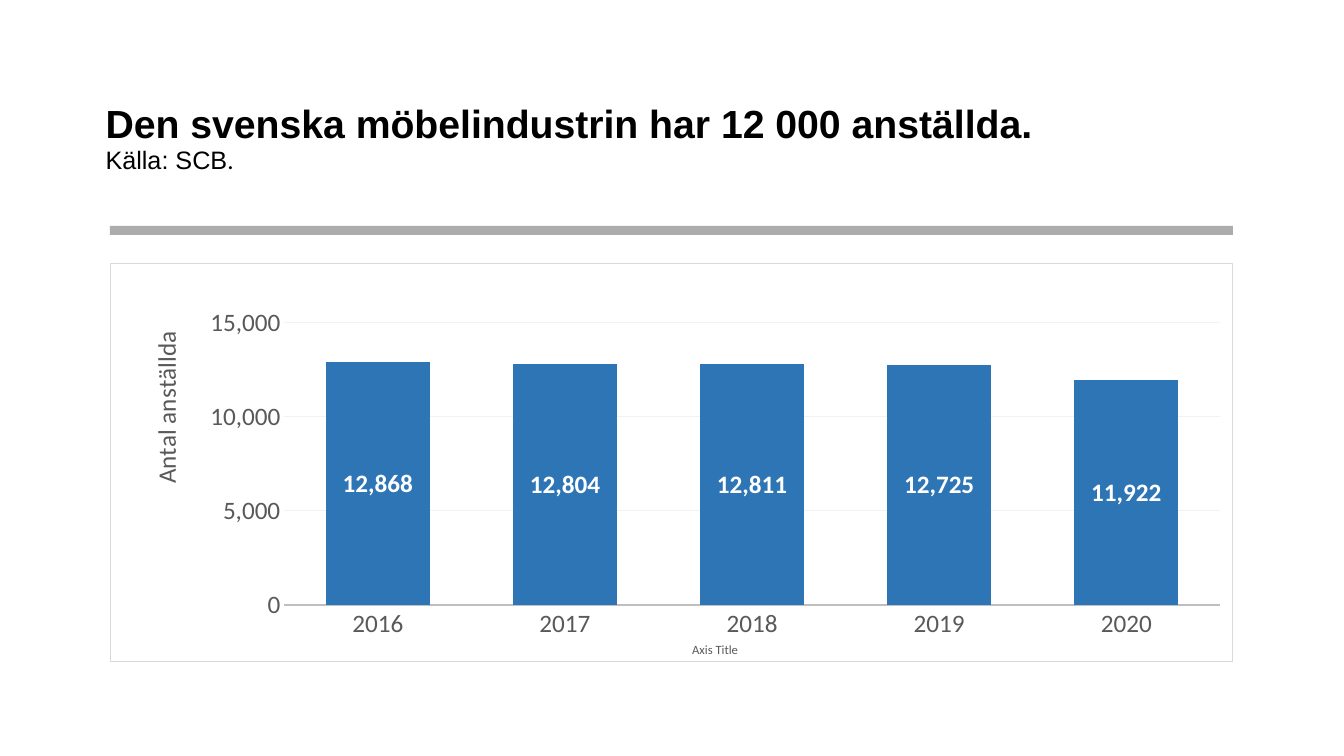
"""Build a slide with a column chart of employees in the Swedish furniture industry."""
from lxml import etree
from pptx import Presentation
from pptx.chart.data import CategoryChartData
from pptx.dml.color import RGBColor
from pptx.enum.chart import XL_CHART_TYPE, XL_LABEL_POSITION, XL_TICK_MARK
from pptx.enum.shapes import MSO_SHAPE
from pptx.enum.text import MSO_ANCHOR
from pptx.oxml import parse_xml
from pptx.oxml.ns import qn
from pptx.util import Cm, Pt

COLUMNS = XL_CHART_TYPE.COLUMN_CLUSTERED
CENTER = XL_LABEL_POSITION.CENTER
NO_TICK = XL_TICK_MARK.NONE
RECTANGLE = MSO_SHAPE.RECTANGLE
MIDDLE = MSO_ANCHOR.MIDDLE

BLACK = RGBColor(0x00, 0x00, 0x00)
WHITE = RGBColor(0xFF, 0xFF, 0xFF)
RULE_GRAY = RGBColor(0x80, 0x80, 0x80)
TEXT_GRAY = RGBColor(0x59, 0x59, 0x59)
AXIS_GRAY = RGBColor(0xBF, 0xBF, 0xBF)
GRID_GRAY = RGBColor(0xF2, 0xF2, 0xF2)
BLUE = RGBColor(0x2E, 0x75, 0xB6)

CHART_FRAME = """<c:spPr xmlns:c="http://schemas.openxmlformats.org/drawingml/2006/chart"
 xmlns:a="http://schemas.openxmlformats.org/drawingml/2006/main">
<a:solidFill><a:srgbClr val="FFFFFF"/></a:solidFill>
<a:ln w="9525"><a:solidFill><a:srgbClr val="D9D9D9"/></a:solidFill></a:ln></c:spPr>"""


def set_font(font, size, color, bold=False, name="Calibri"):
    font.name, font.size, font.bold = name, Pt(size), bold
    font.color.rgb = color


def set_layout(layout, **settings):
    manual = etree.SubElement(layout, qn("c:manualLayout"))
    for tag, value in settings.items():
        etree.SubElement(manual, qn(f"c:{tag}")).set("val", str(value))


deck = Presentation()
deck.slide_width, deck.slide_height = Cm(33.87), Cm(19.05)
page = deck.slides.add_slide(deck.slide_layouts[6])

heading = page.shapes.add_textbox(Cm(2.41), Cm(1.68), Cm(29.03), Cm(3.68))
frame = heading.text_frame
frame.word_wrap = True
frame.vertical_anchor = MIDDLE
para = frame.paragraphs[0]
para.line_spacing = 0.9
span = para.add_run()
span.text = "Den svenska möbelindustrin har 12 000 anställda."
set_font(span.font, 28, BLACK, True, "Arial")
para.add_line_break()
for text, font_name in (("Källa: SCB", "Arial"), (".", "Calibri")):
    span = para.add_run()
    span.text = text
    set_font(span.font, 18, BLACK, name=font_name)

rule = page.shapes.add_shape(RECTANGLE, Cm(2.77), Cm(5.69), Cm(28.3), Cm(0.23))
rule.shadow.inherit = False
rule.fill.solid()
rule.fill.fore_color.rgb = RULE_GRAY
rule.line.fill.background()
rule_color = rule.fill._xPr.find(qn("a:solidFill"))[0]
etree.SubElement(rule_color, qn("a:alpha")).set("val", "65000")

data = CategoryChartData(number_format="#,##0")
data.categories = ["2016", "2017", "2018", "2019", "2020"]
data.add_series("Antal anställda", (12868, 12804, 12811, 12725, 11922))
chart = page.shapes.add_chart(
    COLUMNS, Cm(2.77), Cm(6.63), Cm(28.3), Cm(10.06), data).chart
chart.has_legend = False
chart.has_title = False
set_font(chart.font, 9, BLACK)
chart_space = chart._chartSpace
chart_space.find(qn("c:chart")).addnext(parse_xml(CHART_FRAME))

plot_area = chart_space.find(f".//{qn('c:plotArea')}")
plot_layout = plot_area.find(qn("c:layout"))
if plot_layout is None:
    plot_layout = etree.Element(qn("c:layout"))
    plot_area.insert(0, plot_layout)
set_layout(plot_layout, layoutTarget="inner", xMode="edge", yMode="edge",
           x=0.155, y=0.053, w=0.834, h=0.804)

years, employees = chart.category_axis, chart.value_axis
for axis, title, size in ((years, "Axis Title", 9), (employees, "Antal anställda", 18)):
    axis.major_tick_mark = axis.minor_tick_mark = NO_TICK
    set_font(axis.tick_labels.font, 18, TEXT_GRAY)
    title_para = axis.axis_title.text_frame.paragraphs[0]
    title_para.text = title
    set_font(title_para.font, size, TEXT_GRAY)
years.format.line.color.rgb = AXIS_GRAY
years.format.line.width = Pt(1.25)

employees.minimum_scale, employees.maximum_scale = 0, 17000
employees.major_unit = 5000
employees.tick_labels.number_format = "#,##0"
employees.tick_labels.number_format_is_linked = False
employees.format.line.fill.background()
employees.major_gridlines.format.line.color.rgb = GRID_GRAY
employees.major_gridlines.format.line.width = Pt(0.75)
title_element = employees.axis_title._element
title_body = title_element.find(f".//{qn('a:bodyPr')}")
title_body.set("rot", "-5400000")
title_body.set("vert", "horz")
set_layout(title_element.find(qn("c:layout")), xMode="edge", yMode="edge", x=0.03, y=0.16)

plot = chart.plots[0]
plot.gap_width, plot.overlap = 80, 25
plot.vary_by_categories = False
columns = plot.series[0]
columns.format.fill.solid()
columns.format.fill.fore_color.rgb = BLUE
labels = columns.data_labels
labels.show_value = True
labels.position = CENTER
labels.number_format = "#,##0"
labels.number_format_is_linked = False
set_font(labels.font, 18, WHITE, True)

deck.save("out.pptx")
